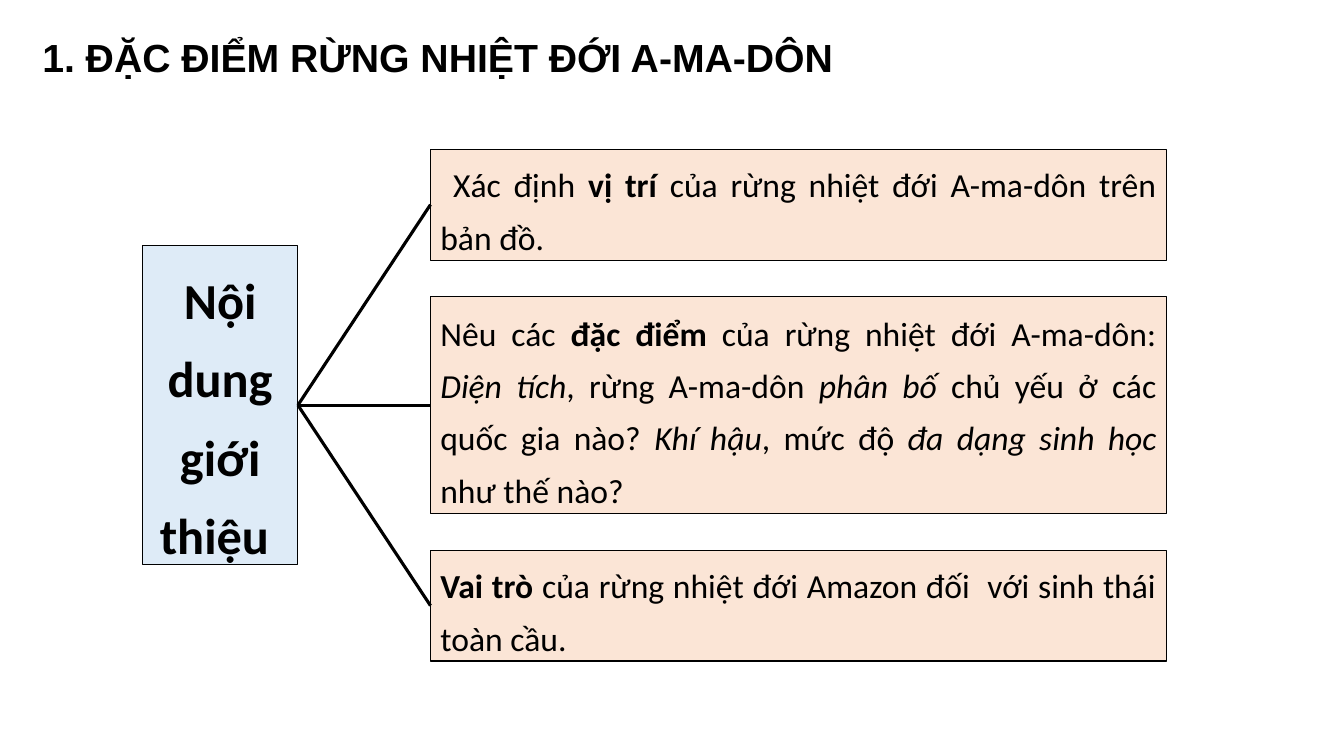
from pptx import Presentation
from pptx.dml.color import RGBColor
from pptx.enum.shapes import MSO_CONNECTOR, MSO_SHAPE
from pptx.enum.text import MSO_ANCHOR, MSO_AUTO_SIZE, PP_ALIGN
from pptx.oxml.ns import qn
from pptx.util import Pt
from lxml import etree

BLACK = RGBColor(0x00, 0x00, 0x00)
PALE_BLUE = RGBColor(0xDE, 0xEB, 0xF7)
PALE_ORANGE = RGBColor(0xFB, 0xE5, 0xD6)


def add_run(paragraph, text, size, font="Calibri", style=""):
    run = paragraph.add_run()
    run.text = text
    run.font.name = font
    run.font.size = Pt(size)
    run.font.bold = style == "bold"
    run.font.italic = style == "italic"
    run.font.color.rgb = BLACK


def add_box(left, top, width, height, fill, anchor, align, size, runs):
    box = slide.shapes.add_shape(
        MSO_SHAPE.RECTANGLE, Pt(left), Pt(top), Pt(width), Pt(height))
    box.shadow.inherit = False
    box.fill.solid()
    box.fill.fore_color.rgb = fill
    box.line.color.rgb = BLACK
    box.line.width = Pt(0.75)
    frame = box.text_frame
    frame.word_wrap = True
    frame.auto_size = MSO_AUTO_SIZE.SHAPE_TO_FIT_TEXT
    frame.vertical_anchor = anchor
    paragraph = frame.paragraphs[0]
    paragraph.alignment = align
    paragraph.line_spacing = 1.3
    for text, style in runs:
        add_run(paragraph, text, size, style=style)
    return box


prs = Presentation()
prs.slide_width, prs.slide_height = Pt(960), Pt(540)
slide = prs.slides.add_slide(prs.slide_layouts[5])

# Title
title = slide.shapes.title
title.left, title.top, title.width, title.height = Pt(23), Pt(20), Pt(586), Pt(41)
heading = title.text_frame
heading.word_wrap = False
heading.auto_size = MSO_AUTO_SIZE.SHAPE_TO_FIT_TEXT
heading.vertical_anchor = MSO_ANCHOR.TOP
heading.paragraphs[0].alignment = PP_ALIGN.LEFT
add_run(heading.paragraphs[0], "1. ĐẶC ĐIỂM RỪNG NHIỆT ĐỚI A-MA-DÔN", 28, "Arial", "bold")

# Root of the diagram
root = add_box(101.8, 175.4, 111, 228, PALE_BLUE, MSO_ANCHOR.TOP, PP_ALIGN.CENTER,
               36, [("Nội dung giới thiệu ", "bold")])

# Topics, stacked with equal gaps: height and runs
topics = [
    (79.2, [(" Xác định ", ""), ("vị trí ", "bold"),
            ("của rừng nhiệt đới A-ma-dôn trên bản đồ.", "")]),
    (154.8, [("Nêu các ", ""), ("đặc điểm ", "bold"),
             ("của rừng nhiệt đới A-ma-dôn: ", ""), ("Diện tích", "italic"),
             (", rừng A-ma-dôn ", ""), ("phân bố ", "italic"),
             ("chủ yếu ở các quốc gia nào? ", ""), ("Khí hậu", "italic"),
             (", mức độ ", ""), ("đa dạng sinh học", "italic"),
             (" như thế nào?", "")]),
    (79.2, [("Vai trò ", "bold"),
            ("của rừng nhiệt đới Amazon đối  với sinh thái toàn cầu.", "")]),
]
GAP = 26.2
top = 106.6
for height, runs in topics:
    topic = add_box(307.5, top, 525.6, height, PALE_ORANGE, MSO_ANCHOR.MIDDLE,
                    PP_ALIGN.JUSTIFY, 24, runs)
    top += height + GAP

    # Branch from the root to this topic
    branch = slide.shapes.add_connector(MSO_CONNECTOR.STRAIGHT, 0, 0, 0, 0)
    branch.begin_connect(root, 3)
    branch.end_connect(topic, 1)
    branch.line.color.rgb = BLACK
    branch.line.width = Pt(2.25)
    etree.SubElement(branch._element.spPr, qn("a:effectLst"))

prs.save("out.pptx")
